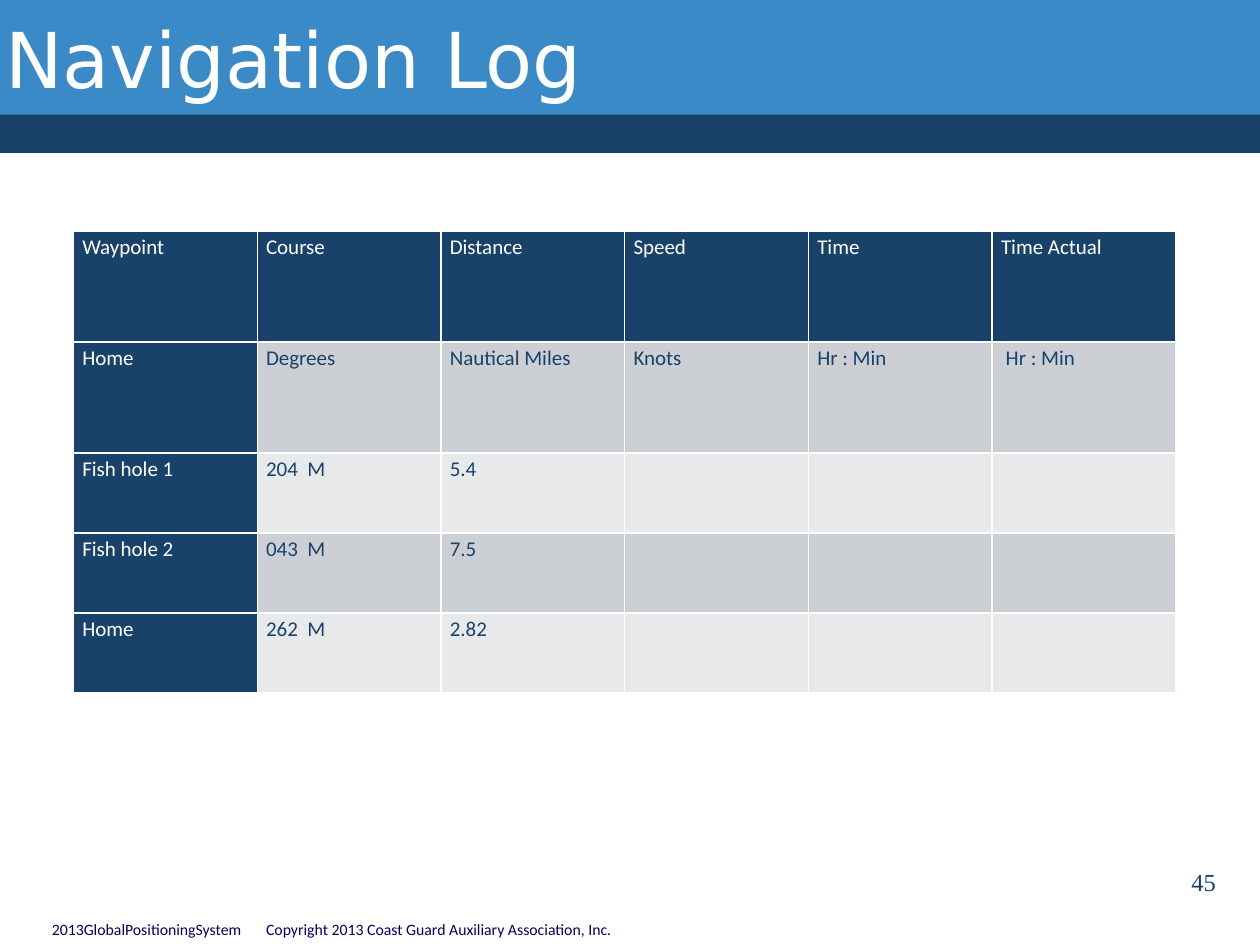
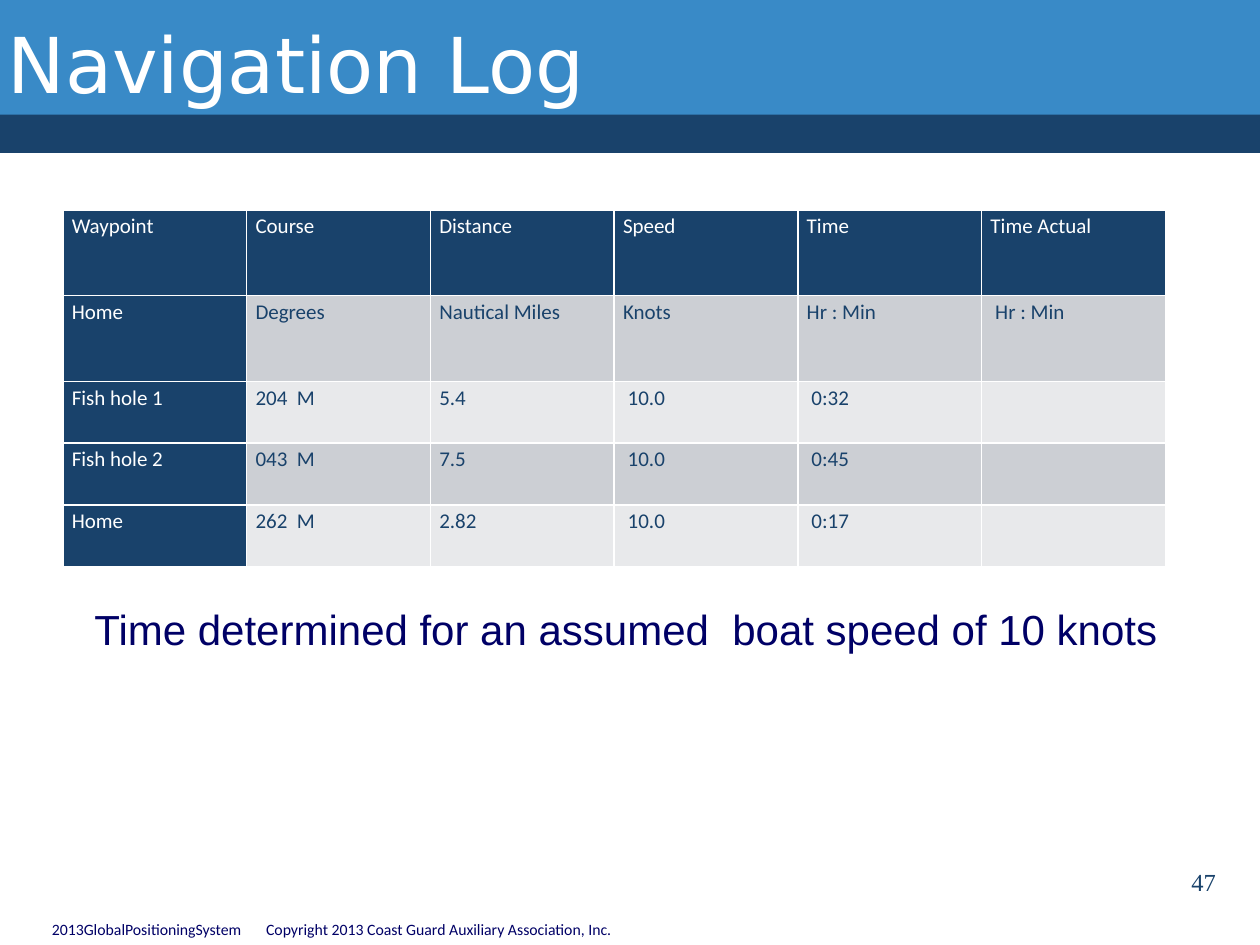
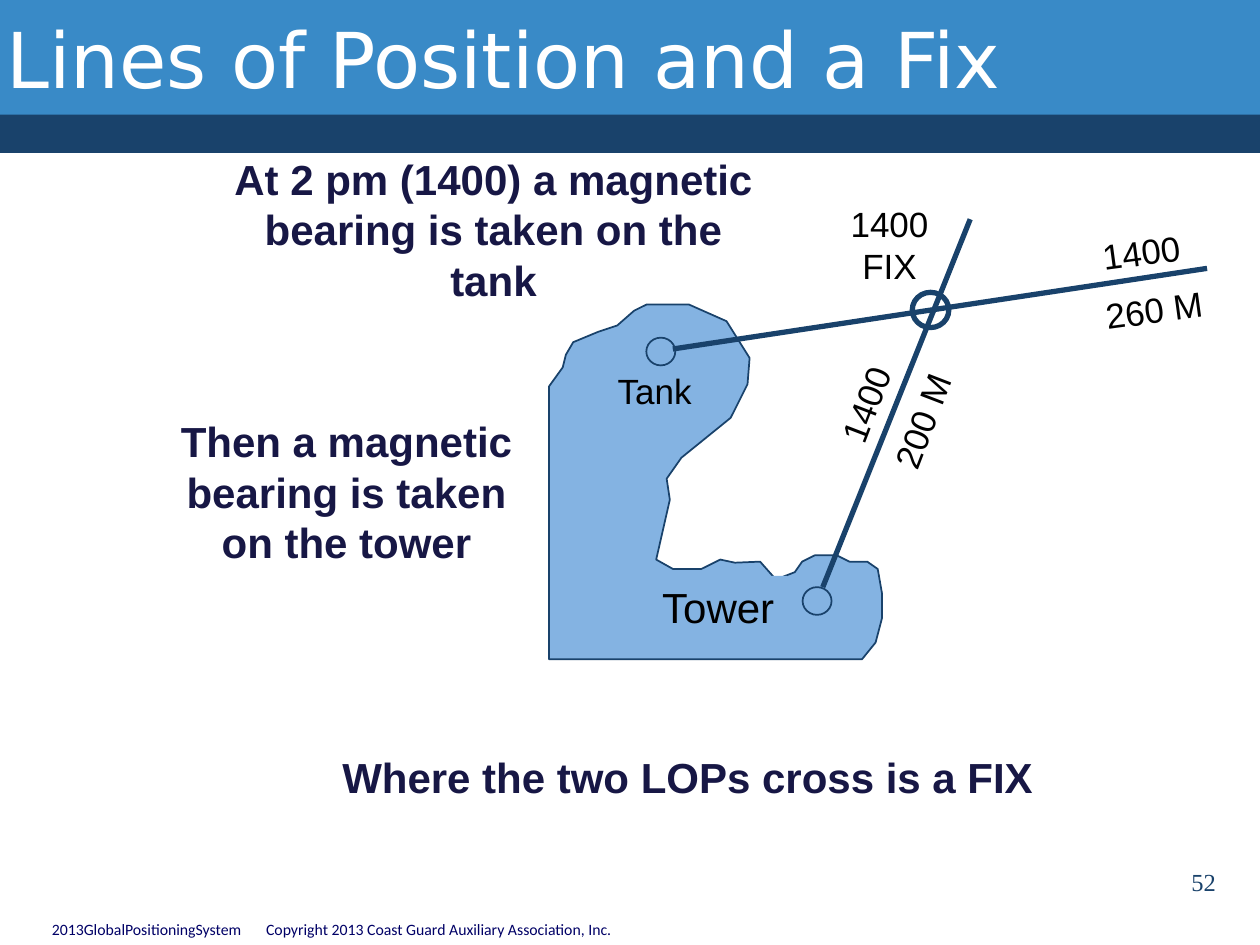
"""Build three navigation slides: two logs and a position fix."""
from lxml import etree
from pptx import Presentation
from pptx.dml.color import RGBColor
from pptx.enum.shapes import MSO_CONNECTOR, MSO_SHAPE
from pptx.enum.text import MSO_ANCHOR, MSO_AUTO_SIZE, PP_ALIGN
from pptx.oxml.ns import qn
from pptx.util import Inches, Pt

LEFT, CENTER, RIGHT = PP_ALIGN.LEFT, PP_ALIGN.CENTER, PP_ALIGN.RIGHT
TOP, MIDDLE = MSO_ANCHOR.TOP, MSO_ANCHOR.MIDDLE
NO_FIT = MSO_AUTO_SIZE.NONE
RECTANGLE, OVAL = MSO_SHAPE.RECTANGLE, MSO_SHAPE.OVAL
STRAIGHT = MSO_CONNECTOR.STRAIGHT

hue = RGBColor.from_string
NAVY, BLUE, LAND, WHITE, BLACK = "19426B", "398AC7", "84B3E2", "FFFFFF", "000000"
INK, DARK_INK = "000066", "171745"
BANDS = ["E8E9EB", "CCCFD4"]

TITLE = {"name": "DejaVu Sans", "size": Pt(44)}
FOOTER = {"name": "Calibri", "size": Pt(9)}
NUMBER = {"name": "Times New Roman", "size": Pt(14)}
ENTRY = {"name": "Calibri", "size": Pt(12)}
REMARK = {"name": "Arial", "size": Pt(24)}
STEP = {"name": "Arial", "size": Pt(24), "bold": True}
LABEL = {"name": "Arial", "size": Pt(20)}

WIDTH, HEIGHT = Inches(10), Inches(7.5)
GRID = WIDTH / 120
TIGHT = dict.fromkeys(["left", "top", "right", "bottom"], 0.04)


def place(*cells):
    return [round(cell * GRID) for cell in cells]


def write(frame, text, style, color, align=LEFT, anchor=TOP, wrap=True, margins=None):
    frame.text = text
    layout = {"word_wrap": wrap, "auto_size": NO_FIT, "vertical_anchor": anchor}
    for side, margin in (margins or {}).items():
        layout["margin_" + side] = Inches(margin)
    for key, value in layout.items():
        setattr(frame, key, value)
    for paragraph in frame.paragraphs:
        paragraph.alignment = align
        for run in paragraph.runs:
            run.font.color.rgb = hue(color)
            for key, value in style.items():
                setattr(run.font, key, value)


deck = Presentation()
deck.slide_width, deck.slide_height = WIDTH, HEIGHT
title_only = deck.slide_layouts[5]

pages = [
    ("Navigation Log", (0, 0, 105, 11), "45"),
    ("Navigation Log", (0.24, 0, 102, 12), "47"),
    ("Lines of Position and a Fix", (0.12, 0, 102, 11), "52"),
]
slides = []
for heading, heading_box, number in pages:
    slide = deck.slides.add_slide(title_only)
    slides.append(slide)
    title = slide.shapes.title
    title.left, title.top, title.width, title.height = place(*heading_box)
    write(title.text_frame, heading, TITLE, WHITE, anchor=MIDDLE, margins=TIGHT)
    page_number = slide.shapes.add_textbox(*place(92, 82, 25, 6))
    write(page_number.text_frame, number, NUMBER, NAVY, RIGHT)

first_log, second_log, fix_slide = slides

shared = title_only.shapes.element
for band_box, band_color in [((0, 10.44, 120, 4.12), NAVY), ((0, 0, 120, 10.92), BLUE)]:
    band = first_log.shapes.add_shape(RECTANGLE, *place(*band_box))
    band.shadow.inherit = False
    band.fill.solid()
    band.fill.fore_color.rgb = hue(band_color)
    band.line.fill.background()
    shared.append(band.element)

footer = first_log.shapes.add_textbox(*place(3.5, 87, 64, 3))
write(
    footer.text_frame,
    "2013GlobalPositioningSystem\tCopyright 2013 Coast Guard Auxiliary Association, Inc.",
    FOOTER, INK, margins={"left": 0.12},
)
footer_properties = footer.text_frame.paragraphs[0]._p.get_or_add_pPr()
tab_list = etree.SubElement(footer_properties, qn("a:tabLst"))
etree.SubElement(tab_list, qn("a:tab"), pos=str(Inches(1.7)), algn="l")
shared.append(footer.element)

headings = ["Waypoint", "Course", "Distance", "Speed", "Time", "Time Actual"]
units = ["Home", "Degrees", "Nautical Miles", "Knots", "Hr : Min", " Hr : Min"]
legs = [
    ["Fish hole 1", "204  M", "5.4"],
    ["Fish hole 2", "043  M", "7.5"],
    ["Home", "262  M", "2.82"],
]
knots = 10
timed_legs = []
for waypoint, course, miles in legs:
    minutes = round(float(miles) / knots * 60)
    timed_legs.append([waypoint, course, miles, f" {knots:.1f}", f" 0:{minutes:02d}"])

heading_share = 0.24
leg_share = (1 - 2 * heading_share) / len(legs)
row_shares = [heading_share] * 2 + [leg_share] * len(legs)

for slide, log_box, log_legs in [
    (first_log, (7, 22, 105, 44), legs),
    (second_log, (6, 20, 105, 34), timed_legs),
]:
    entries = [headings, units] + log_legs
    log = slide.shapes.add_table(len(entries), len(headings), *place(*log_box)).table
    log.first_row = log.horz_banding = False
    for r, entry_row in enumerate(entries):
        log.rows[r].height = round(log_box[3] * GRID * row_shares[r])
        for c in range(len(headings)):
            cell = log.cell(r, c)
            is_heading = r == 0 or c == 0
            cell.fill.solid()
            cell.fill.fore_color.rgb = hue(NAVY if is_heading else BANDS[r % 2])
            cell.margin_left = cell.margin_right = Inches(0.07)
            cell.margin_top = cell.margin_bottom = 0
            if c < len(entry_row):
                write(cell.text_frame, entry_row[c], ENTRY, WHITE if is_heading else NAVY)
                cell.text_frame.paragraphs[0].line_spacing = 1.15
            properties = cell._tc.get_or_add_tcPr()
            for position, side in enumerate(["lnL", "lnR", "lnT", "lnB"]):
                border = etree.Element(qn("a:" + side), w=str(Pt(1)))
                border_fill = etree.SubElement(border, qn("a:solidFill"))
                etree.SubElement(border_fill, qn("a:srgbClr"), val=WHITE)
                properties.insert(position, border)

remark = second_log.shapes.add_textbox(*place(3, 57, 108, 11))
write(
    remark.text_frame, "Time determined for an assumed  boat speed of 10 knots",
    REMARK, INK, margins={**TIGHT, "left": 0.5},
)

chart = fix_slide.shapes
west, south, east, north = 52.3, 62.8, 84, 29
west_shore = [(west, 36.8), (west, south)]
tower_point = [(82.1, south), (83.4, 61.2), (east, 58.9), (east, 56.5), (83.6, 54.2), (82.6, 53.5)]
tower_cove = [(80.9, 53.5), (79.7, 52.9), (77.6, 52.9), (76.4, 53.5), (75.7, 54.5), (73.9, 55.2)]
harbour = [(72.4, 53.5), (70, 53.6), (68.6, 53.3), (66.8, 54.2), (64.1, 54.2), (62.5, 53.3)]
neck = [(63.8, 47.6), (63.5, 45.6), (64.9, 43.6), (69.6, 39.8)]
tank_head = [(71.2, 36.6), (71.4, 34.1), (69.2, 30.6), (65.6, north), (61.6, north), (60.4, 29.6)]
tank_slope = [(58.8, 31), (57, 31.6), (54.6, 32.6), (53.9, 33.8), (53.6, 35)]

coast = []
for stretch in [west_shore, tower_point, tower_cove, harbour, neck, tank_head, tank_slope]:
    coast += [place(*point) for point in stretch]
outline = chart.build_freeform(*coast[0], scale=1.0)
outline.add_line_segments(coast[1:], close=True)
landmarks = [outline.convert_to_shape()]

for name, name_box, style, (mark_x, mark_y) in [
    ("Tower", (61.8, 54.84, 13.2, 6), REMARK, (77.82, 57.24)),
    ("Tank", (57.6, 34.56, 9.48, 5.16), LABEL, (62.94, 33.48)),
]:
    name_plate = chart.add_shape(RECTANGLE, *place(*name_box))
    write(name_plate.text_frame, name, style, BLACK, CENTER, wrap=False)
    mark_width, mark_height = 2.76, 2.64
    mark = chart.add_shape(
        OVAL,
        *place(mark_x - mark_width / 2, mark_y - mark_height / 2, mark_width, mark_height),
    )
    landmarks += [name_plate, mark]

for landmark in landmarks:
    landmark.shadow.inherit = False
    landmark.fill.solid()
    landmark.fill.fore_color.rgb = hue(LAND)
    if landmark.has_text_frame and landmark.text_frame.text:
        landmark.line.fill.background()
    else:
        landmark.line.color.rgb = hue(NAVY)
        landmark.line.width = Pt(1)

for ends, bearing, label_corner, angle in [
    ((64.08, 33.24, 114.96, 25.56), " 260 M", (102.72, 21.36), 352.3),
    ((78.36, 55.92, 92.4, 20.88), " 200 M", (78.72, 34.08), 291),
]:
    position_line = chart.add_connector(STRAIGHT, *place(*ends))
    position_line.line.color.rgb = hue(NAVY)
    position_line.line.width = Pt(3)
    etree.SubElement(position_line.element.spPr, qn("a:effectLst"))
    bearing_label = chart.add_textbox(*place(*label_corner, 12.72, 10.92))
    bearing_label.rotation = angle
    write(bearing_label.text_frame, "1400\n" + bearing, LABEL, BLACK, CENTER, wrap=False)
    bearing_label.text_frame.paragraphs[1].line_spacing = 1.4

fix = chart.add_shape(OVAL, *place(86.88, 27.84, 3.48, 3.36))
fix.shadow.inherit = False
fix.fill.background()
fix.line.color.rgb = hue(NAVY)
fix.line.width = Pt(3)

for caption_box, caption, style, color in [
    ((78.48, 18.72, 12.48, 9.24), "1400 FIX", LABEL, BLACK),
    ((20, 14, 54, 15.72), "At 2 pm (1400) a magnetic bearing is taken on the tank", STEP, DARK_INK),
    ((14, 39, 38, 15.72), "Then a magnetic bearing is taken on the tower", STEP, DARK_INK),
    ((30, 71, 71, 6), "Where the two LOPs cross is a FIX", STEP, DARK_INK),
]:
    caption_frame = chart.add_textbox(*place(*caption_box)).text_frame
    write(caption_frame, caption, style, color, CENTER)

deck.save("out.pptx")
